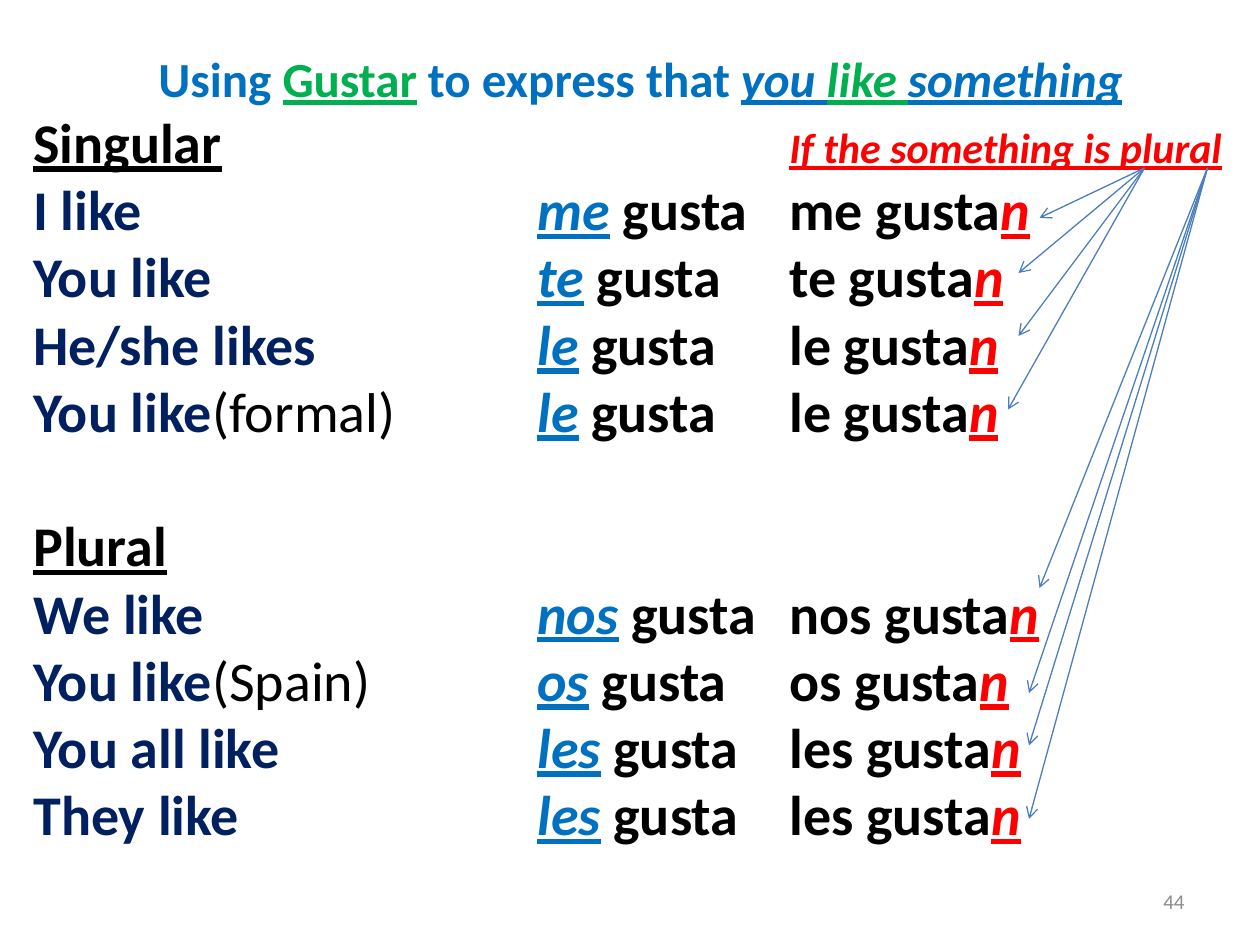
from lxml.etree import SubElement
from pptx import Presentation
from pptx.dml.color import RGBColor
from pptx.enum.shapes import MSO_CONNECTOR
from pptx.enum.text import MSO_ANCHOR, MSO_AUTO_SIZE, PP_ALIGN
from pptx.oxml.ns import qn
from pptx.util import Inches, Pt

BLACK = RGBColor(0x00, 0x00, 0x00)
NAVY = RGBColor(0x00, 0x20, 0x60)
BLUE = RGBColor(0x00, 0x70, 0xC0)
GREEN = RGBColor(0x00, 0xB0, 0x50)
RED = RGBColor(0xFF, 0x00, 0x00)
GREY = RGBColor(0x8C, 0x8C, 0x8C)
ARROW_BLUE = RGBColor(0x4B, 0x7E, 0xBC)

COLUMNS, ROWS = 120, 90
GUSTA_TAB, GUSTAN_TAB = 48, 72

# English, note in brackets, pronoun
SINGULAR = [("I like", "", "me"), ("You like", "", "te"),
            ("He/she likes", "", "le"), ("You like", "(formal)", "le")]
PLURAL = [("We like", "", "nos"), ("You like", "(Spain)", "os"),
          ("You all like", "", "les"), ("They like", "", "les")]

# Arrow start, followed by the arrow ends, in grid columns and rows
ARROWS = [((109, 16), [(99, 20.75), (97, 26), (97, 32), (96, 39)]),
          ((115, 16), [(99, 56), (98, 66), (98, 71), (98, 78)])]


class GustarSlide:
    font = "Calibri"
    size = 32

    def __init__(self, deck):
        self.column = deck.slide_width / COLUMNS
        self.row = deck.slide_height / ROWS
        self.slide = deck.slides.add_slide(deck.slide_layouts[5])

    def x(self, columns):
        return round(columns * self.column)

    def y(self, rows):
        return round(rows * self.row)

    def title(self, left, top, width, height):
        heading = self.slide.shapes.title
        heading.left, heading.top = self.x(left), self.y(top)
        heading.width, heading.height = self.x(width), self.y(height)
        return self.frame(heading, MSO_ANCHOR.TOP)

    def text_box(self, left, top, width, height, anchor=MSO_ANCHOR.TOP):
        box = self.slide.shapes.add_textbox(
            self.x(left), self.y(top), self.x(width), self.y(height))
        return self.frame(box, anchor)

    def frame(self, shape, anchor):
        frame = shape.text_frame
        frame.word_wrap = True
        frame.auto_size = MSO_AUTO_SIZE.NONE
        frame.vertical_anchor = anchor
        return frame

    def line(self, frame, tabs=(), align=PP_ALIGN.LEFT):
        """Return the next paragraph, using the empty first one if it is free."""
        first = frame.paragraphs[0]
        paragraph = frame.add_paragraph() if first.runs else first
        paragraph.alignment = align
        if tabs:
            stops = SubElement(paragraph._p.get_or_add_pPr(), qn("a:tabLst"))
            for stop in tabs:
                SubElement(stops, qn("a:tab"), pos=str(self.x(stop)), algn="l")
        return paragraph

    def run(self, paragraph, text, color, size=None, bold=True,
            italic=False, underline=False):
        run = paragraph.add_run()
        run.text = text
        font = run.font
        font.name, font.size = self.font, Pt(size or self.size)
        font.bold, font.italic, font.underline = bold, italic, underline
        font.color.rgb = color

    def conjugation(self, frame, english, note, pronoun):
        row = self.line(frame, (GUSTA_TAB, GUSTAN_TAB))
        self.run(row, english, NAVY)
        if note:
            self.run(row, note, BLACK, bold=False)
        self.run(row, "\t", BLACK)
        self.run(row, pronoun, BLUE, italic=True, underline=True)
        self.run(row, f" gusta\t{pronoun} gusta", BLACK)
        self.run(row, "n", RED, italic=True, underline=True)

    def arrow(self, start, end):
        arrow = self.slide.shapes.add_connector(
            MSO_CONNECTOR.STRAIGHT, self.x(start[0]), self.y(start[1]),
            self.x(end[0]), self.y(end[1]))
        arrow.line.color.rgb = ARROW_BLUE
        arrow.line.width = Pt(0.75)
        SubElement(arrow.line._get_or_add_ln(), qn("a:tailEnd"), type="arrow")
        SubElement(arrow._element.spPr, qn("a:effectLst"))


def main():
    deck = Presentation()
    deck.slide_width, deck.slide_height = Inches(10), Inches(7.5)
    page = GustarSlide(deck)

    heading = page.line(page.title(2, 4, 118, 6.5), align=PP_ALIGN.CENTER)
    for text, color, slanted, underlined in [
            ("Using ", BLUE, False, False), ("Gustar", GREEN, False, True),
            (" to express that ", BLUE, False, False),
            ("you ", BLUE, True, True), ("like ", GREEN, True, True),
            ("something", BLUE, True, True)]:
        page.run(heading, text, color, 28, italic=slanted, underline=underlined)

    verbs = page.text_box(2, 9.65, 118, 76)
    singular = page.line(verbs, (GUSTAN_TAB,))
    page.run(singular, "Singular", BLACK, underline=True)
    page.run(singular, "\t", BLACK)
    page.run(singular, "If the something is plural", RED, 24,
             italic=True, underline=True)
    for verb in SINGULAR:
        page.conjugation(verbs, *verb)

    plural = page.line(verbs)
    plural.space_before = Pt(38.4)
    page.run(plural, "Plural", BLACK, underline=True)
    for verb in PLURAL:
        page.conjugation(verbs, *verb)

    number = page.text_box(86, 83.4, 28, 4.8, MSO_ANCHOR.MIDDLE)
    page.run(page.line(number, align=PP_ALIGN.RIGHT), "44", GREY, 12, bold=False)

    for start, ends in ARROWS:
        for end in ends:
            page.arrow(start, end)

    deck.save("out.pptx")


if __name__ == "__main__":
    main()
